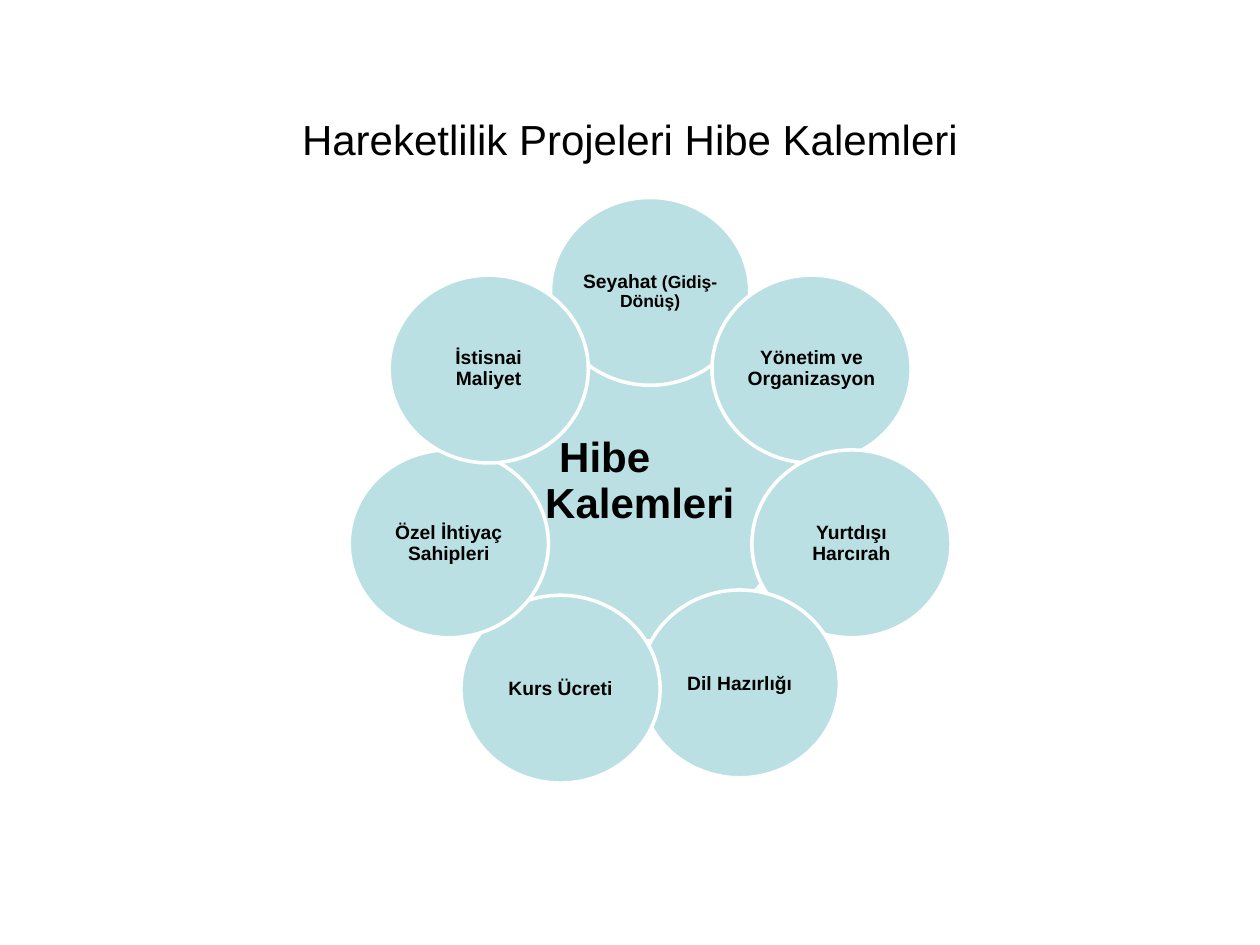
"""Build the grant items slide: seven petals around a centre."""
import math
from pptx import Presentation
from pptx.dml.color import RGBColor
from pptx.enum import shapes, text
from pptx.util import Pt

AQUA = RGBColor(0xBB, 0xE0, 0xE3)
WHITE = RGBColor(0xFF, 0xFF, 0xFF)
BLACK = RGBColor(0, 0, 0)
FONT = "Arial"
MID_X, MID_Y, RADIUS = 371.5, 284.5, 118
PETAL_W, PETAL_H = 113.8, 107.3
ITEMS = [
    (("Seyahat", 11), (" (Gidiş-Dönüş)", 10)),
    (("Yönetim ve Organizasyon", 11),),
    (("Yurtdışı Harcırah", 11),),
    (("Dil Hazırlığı", 11),),
    (("Kurs Ücreti", 11),),
    (("Özel İhtiyaç Sahipleri", 11),),
    (("İstisnai Maliyet", 11),),
]
DROPS = {4: 3}


def set_font(font, size, bold):
    font.name, font.size, font.bold = FONT, Pt(size), bold
    font.color.rgb = BLACK


def set_frame(frame, inset):
    frame.word_wrap = True
    frame.auto_size = text.MSO_AUTO_SIZE.NONE
    frame.vertical_anchor = text.MSO_ANCHOR.MIDDLE
    frame.margin_left = frame.margin_right = Pt(inset)
    frame.margin_top = frame.margin_bottom = Pt(inset)


def add_disc(slide, x, y, width, height):
    disc = slide.shapes.add_shape(
        shapes.MSO_SHAPE.OVAL, Pt(x - width / 2), Pt(y - height / 2), Pt(width), Pt(height))
    disc.shadow.inherit = False
    disc.fill.solid()
    disc.fill.fore_color.rgb = AQUA
    disc.line.color.rgb = WHITE
    disc.line.width = Pt(2)
    return disc


def add_petal(slide, index, parts):
    angle = 2 * math.pi * index / len(ITEMS)
    x = MID_X + RADIUS * math.sin(angle)
    y = MID_Y - RADIUS * math.cos(angle) + DROPS.get(index, 0)
    frame = add_disc(slide, x, y, PETAL_W, PETAL_H).text_frame
    set_frame(frame, 1.4)
    para = frame.paragraphs[0]
    para.alignment = text.PP_ALIGN.CENTER
    para.line_spacing = 0.9
    for words, size in parts:
        run = para.add_run()
        run.text = words
        set_font(run.font, size, True)


def add_title(slide, words):
    title = slide.shapes.title
    title.left, title.top, title.width, title.height = Pt(29.5), Pt(55.4), Pt(661), Pt(48.2)
    frame = title.text_frame
    frame.text = words
    frame.word_wrap = True
    frame.vertical_anchor = text.MSO_ANCHOR.MIDDLE
    para = frame.paragraphs[0]
    para.alignment = text.PP_ALIGN.CENTER
    set_font(para.runs[0].font, 24, False)


def add_core(slide, words):
    box = slide.shapes.add_textbox(Pt(301.7), Pt(211.7), Pt(127.4), Pt(127.4))
    frame = box.text_frame
    set_frame(frame, 2.9)
    para = frame.paragraphs[0]
    para.text = words
    para.alignment = text.PP_ALIGN.LEFT
    para.line_spacing = 0.9
    props = para._p.get_or_add_pPr()
    props.set("marL", str(Pt(7)))
    props.set("indent", str(Pt(8)))
    set_font(para.runs[0].font, 24, True)


def main():
    deck = Presentation()
    deck.slide_width, deck.slide_height = Pt(720), Pt(540)
    slide = deck.slides.add_slide(deck.slide_layouts[5])
    add_title(slide, "Hareketlilik Projeleri Hibe Kalemleri")
    add_disc(slide, 365.4, 276.1, 180.7, 180.7)
    for index, parts in enumerate(ITEMS):
        add_petal(slide, index, parts)
    add_core(slide, "Hibe Kalemleri")
    deck.save("out.pptx")


if __name__ == "__main__":
    main()
